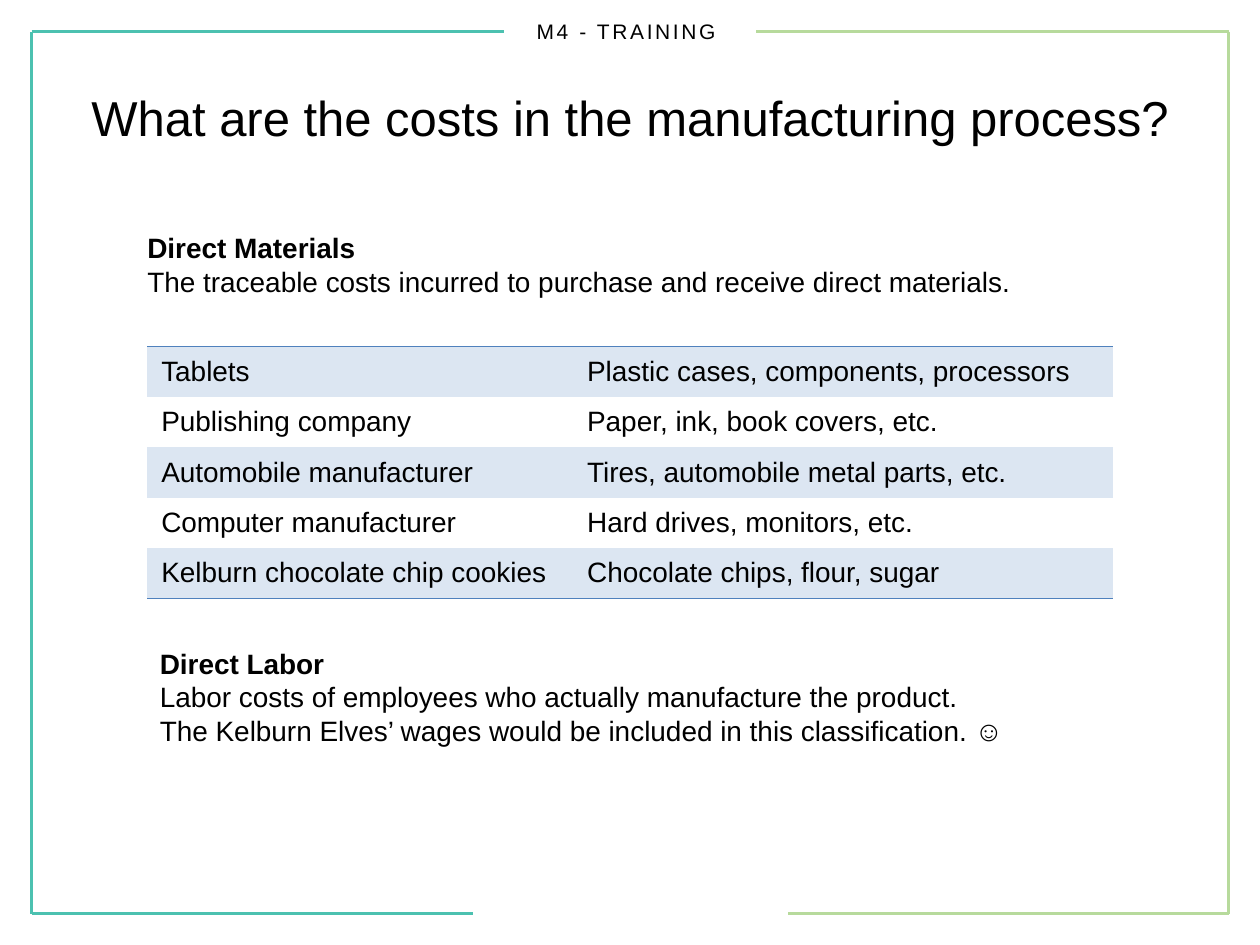
import pptx
import pptx.util
import pptx.dml.color
import pptx.enum.shapes
import pptx.enum.text
import pptx.oxml
import pptx.oxml.ns
from dataclasses import dataclass
from pptx.util import Inches

MIDDLE = pptx.enum.text.MSO_ANCHOR.MIDDLE
CENTER = pptx.enum.text.PP_ALIGN.CENTER


@dataclass(frozen=True)
class Theme:
    font: str = "Arial"
    ink: str = "000000"
    teal: str = "4CC1B0"
    green: str = "B7DA9C"
    rule: str = "4F81BD"
    band: str = "DCE6F2"
    title_size: int = 28
    body_size: int = 16
    header_size: int = 12
    frame_width: float = 2.25
    plain_table: str = "{2D5ABB26-0587-4C30-8999-92F81FD0307C}"


class SlideBuilder:
    def __init__(self, slide, theme):
        self.slide = slide
        self.theme = theme

    def color(self, value):
        return pptx.dml.color.RGBColor.from_string(value)

    def style(self, paragraph, size, bold=False):
        font = paragraph.font
        font.name = self.theme.font
        font.size = pptx.util.Pt(size)
        font.bold = bold
        font.color.rgb = self.color(self.theme.ink)

    def line(self, x1, y1, x2, y2, color):
        edge = self.slide.shapes.add_connector(
            pptx.enum.shapes.MSO_CONNECTOR.STRAIGHT,
            Inches(x1), Inches(y1), Inches(x2), Inches(y2))
        edge.line.color.rgb = self.color(color)
        edge.line.width = pptx.util.Pt(self.theme.frame_width)
        pptx.oxml.ns.qn("a:effectLst")
        edge._element.spPr.append(
            pptx.oxml.parse_xml(f'<a:effectLst {pptx.oxml.ns.nsdecls("a")}/>'))

    def title(self, text, left, top, width, height):
        heading = self.slide.shapes.title
        heading.left, heading.top = Inches(left), Inches(top)
        heading.width, heading.height = Inches(width), Inches(height)
        heading.text_frame.text = text
        heading.text_frame.vertical_anchor = MIDDLE
        paragraph = heading.text_frame.paragraphs[0]
        paragraph.alignment = CENTER
        self.style(paragraph, self.theme.title_size)

    def text_box(self, left, top, width, height):
        frame = self.slide.shapes.add_textbox(
            Inches(left), Inches(top), Inches(width), Inches(height)).text_frame
        frame.word_wrap = True
        return frame

    def header(self, text, left, top, width, height):
        frame = self.text_box(left, top, width, height)
        frame.vertical_anchor = MIDDLE
        frame.text = text
        paragraph = frame.paragraphs[0]
        paragraph.alignment = CENTER
        self.style(paragraph, self.theme.header_size)
        # Letter spacing of 1.5 pt
        paragraph.runs[0].font._element.set("spc", "150")

    def definition(self, lines, left, top, width, height, inset=True):
        """A bold term followed by its explanation."""
        frame = self.text_box(left, top, width, height)
        frame.auto_size = pptx.enum.text.MSO_AUTO_SIZE.SHAPE_TO_FIT_TEXT
        if not inset:
            frame.margin_left = frame.margin_right = 0
            frame.margin_top = frame.margin_bottom = 0
        frame.text = "\n".join(lines)
        for index, paragraph in enumerate(frame.paragraphs):
            self.style(paragraph, self.theme.body_size, bold=index == 0)

    def cell_rule(self, cell, side):
        # Borders come before the fill in the cell properties
        cell._tc.get_or_add_tcPr().insert(0, pptx.oxml.parse_xml(
            f'<a:{side} {pptx.oxml.ns.nsdecls("a")} w="12700"><a:solidFill>'
            f'<a:srgbClr val="{self.theme.rule}"/></a:solidFill></a:{side}>'))

    def table(self, rows, left, top, widths, row_height):
        table = self.slide.shapes.add_table(
            len(rows), len(widths), Inches(left), Inches(top),
            Inches(sum(widths)), Inches(row_height * len(rows))).table
        table.first_row = table.horz_banding = False
        style_id = table._tbl.tblPr.find(pptx.oxml.ns.qn("a:tableStyleId"))
        style_id.text = self.theme.plain_table
        for column, width in zip(table.columns, widths):
            column.width = Inches(width)
        for r, row in enumerate(rows):
            table.rows[r].height = Inches(row_height)
            for c, text in enumerate(row):
                cell = table.cell(r, c)
                cell.text = text
                cell.vertical_anchor = MIDDLE
                cell.margin_left = cell.margin_right = Inches(0.11)
                cell.margin_top = cell.margin_bottom = 0
                self.style(cell.text_frame.paragraphs[0], self.theme.body_size)
                if r % 2 == 0:
                    cell.fill.solid()
                    cell.fill.fore_color.rgb = self.color(self.theme.band)
                else:
                    cell.fill.background()
                if r == 0:
                    self.cell_rule(cell, "lnT")
                if r == len(rows) - 1:
                    self.cell_rule(cell, "lnB")


def main():
    presentation = pptx.Presentation()
    presentation.slide_width, presentation.slide_height = Inches(10), Inches(7.5)
    theme = Theme()
    slide = presentation.slides.add_slide(presentation.slide_layouts[5])
    builder = SlideBuilder(slide, theme)

    # Frame, open at the middle of the top and bottom edges
    top, bottom = 0.25, 7.25
    for side, top_gap, bottom_gap, color in (
            (0.25, 4, 3.75, theme.teal), (9.75, 6, 6.25, theme.green)):
        builder.line(side, top, side, bottom, color)
        builder.line(side, top, top_gap, top, color)
        builder.line(side, bottom, bottom_gap, bottom, color)

    # Header and title
    builder.header("M4 - TRAINING", 0, 0, 9.94, 0.5)
    builder.title("What are the costs in the manufacturing process?",
                  0.5, 0.3, 9, 1.25)

    # Direct materials with examples
    content_left = 1.17
    builder.definition(
        ["Direct Materials",
         "The traceable costs incurred to purchase and receive direct materials."],
        content_left, 1.83, 7.83, 0.54, inset=False)
    builder.table(
        [("Tablets", "Plastic cases, components, processors"),
         ("Publishing company", "Paper, ink, book covers, etc."),
         ("Automobile manufacturer", "Tires, automobile metal parts, etc."),
         ("Computer manufacturer", "Hard drives, monitors, etc."),
         ("Kelburn chocolate chip cookies", "Chocolate chips, flour, sugar")],
        content_left, 2.75, (3.38, 4.28), 0.4)

    # Direct labor
    builder.definition(
        ["Direct Labor",
         "Labor costs of employees who actually manufacture the product.",
         "The Kelburn Elves’ wages would be included in this classification. ☺"],
        content_left, 5.08, 7.83, 0.91)

    presentation.save("out.pptx")


if __name__ == "__main__":
    main()
